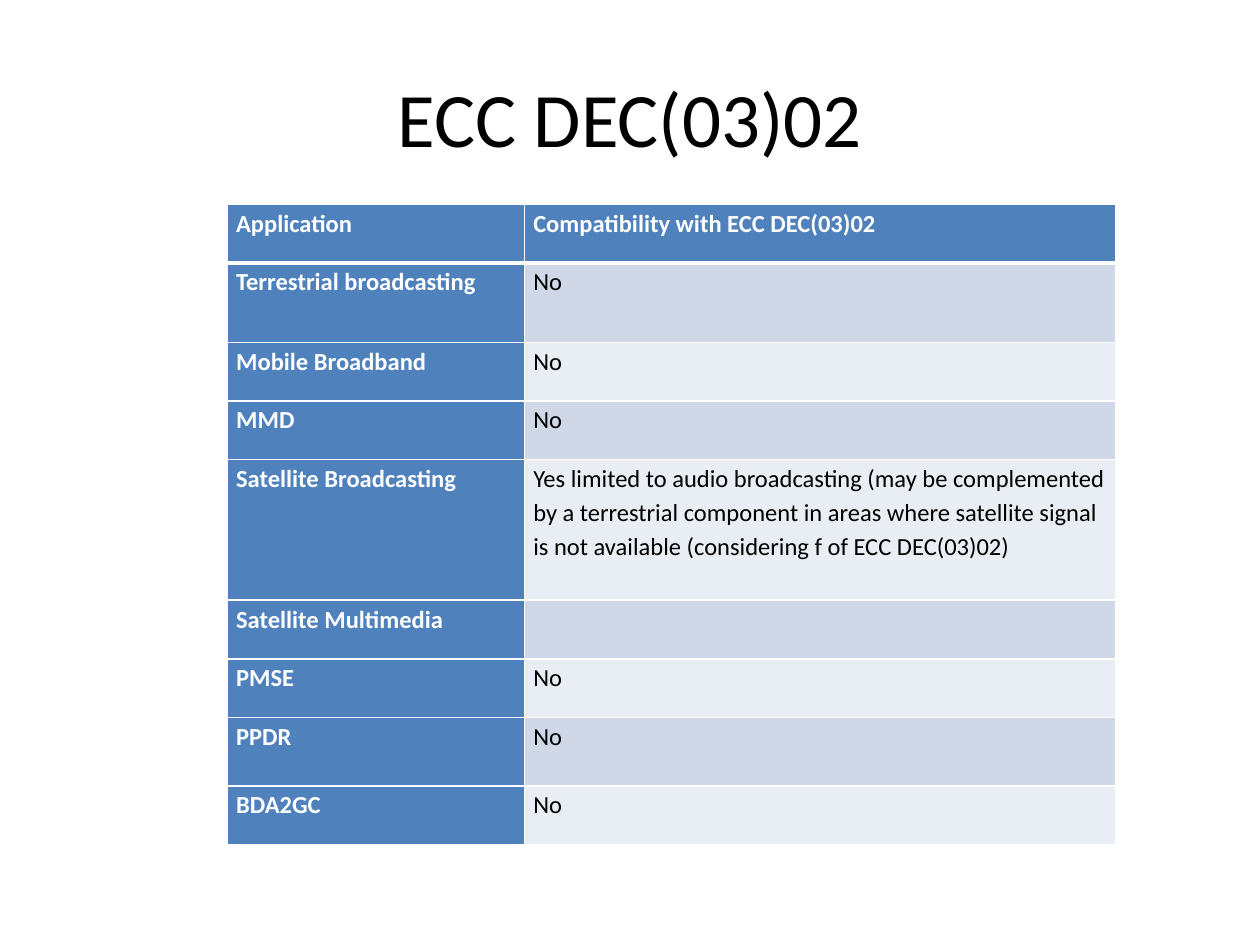
from lxml.etree import SubElement
from pptx import Presentation
from pptx.dml.color import RGBColor
from pptx.enum.text import MSO_ANCHOR, PP_ALIGN
from pptx.oxml.ns import qn
from pptx.util import Cm, Pt

FONT = "Calibri"
BLUE, WHITE, BLACK = "4F81BD", "FFFFFF", "000000"
BANDS = ("D0D8E8", "E9EDF4")
COLUMN_WIDTHS = (5.99, 11.92)
ROW_HEIGHT = 1.18

# Application, compatibility, row height in cm
ROWS = [
    ("Application", "Compatibility with ECC DEC(03)02", ROW_HEIGHT),
    ("Terrestrial broadcasting", "No", 1.6),
    ("Mobile Broadband", "No", ROW_HEIGHT),
    ("MMD", "No", ROW_HEIGHT),
    ("Satellite Broadcasting",
     "Yes limited to audio broadcasting (may be complemented by a terrestrial "
     "component in areas where satellite signal is not available "
     "(considering f of ECC DEC(03)02)", 2.84),
    ("Satellite Multimedia", "", ROW_HEIGHT),
    ("PMSE", "No", ROW_HEIGHT),
    ("PPDR", "No", 1.39),
    ("BDA2GC", "No", ROW_HEIGHT),
]


def color(value):
    return RGBColor.from_string(value)


def set_font(paragraph, size, value, bold=False):
    font = paragraph.font
    font.name, font.size, font.bold = FONT, Pt(size), bold
    font.color.rgb = color(value)


def add_title(page, text):
    box = page.shapes.add_textbox(Cm(1.27), Cm(0.76), Cm(22.86), Cm(3.18))
    frame = box.text_frame
    frame.word_wrap = True
    frame.vertical_anchor = MSO_ANCHOR.MIDDLE
    para = frame.paragraphs[0]
    para.text = text
    para.alignment = PP_ALIGN.CENTER
    set_font(para, 44, BLACK)


def set_borders(cell, top, bottom):
    """Draw white borders; must run before the cell gets its fill."""
    properties = cell._tc.get_or_add_tcPr()
    for side, width in (("L", 1), ("R", 1), ("T", top), ("B", bottom)):
        line = SubElement(properties, qn(f"a:ln{side}"), w=str(Pt(width)))
        fill = SubElement(line, qn("a:solidFill"))
        SubElement(fill, qn("a:srgbClr"), val=WHITE)


def fill_cell(cell, text, fill, heading):
    cell.margin_left = cell.margin_right = Cm(0.18)
    cell.margin_top = cell.margin_bottom = 0
    cell.fill.solid()
    cell.fill.fore_color.rgb = color(fill)
    para = cell.text_frame.paragraphs[0]
    para.text = text
    para.line_spacing = 1.15
    set_font(para, 14, WHITE if heading else BLACK, heading)


def add_compatibility_table(page):
    height = sum(row[2] for row in ROWS)
    table = page.shapes.add_table(
        len(ROWS), len(COLUMN_WIDTHS), Cm(4.58), Cm(4.12),
        Cm(sum(COLUMN_WIDTHS)), Cm(height)).table
    for column, width in zip(table.columns, COLUMN_WIDTHS):
        column.width = Cm(width)
    for i, (*texts, row_height) in enumerate(ROWS):
        table.rows[i].height = Cm(row_height)
        for j, text in enumerate(texts):
            heading = i == 0 or j == 0
            cell = table.cell(i, j)
            set_borders(cell, 3 if i == 1 else 1, 3 if i == 0 else 1)
            fill_cell(cell, text, BLUE if heading else BANDS[(i - 1) % 2], heading)


def main():
    deck = Presentation()
    deck.slide_width, deck.slide_height = Cm(25.4), Cm(19.05)
    page = deck.slides.add_slide(deck.slide_layouts[6])
    add_title(page, "ECC DEC(03)02")
    add_compatibility_table(page)
    deck.save("out.pptx")


if __name__ == "__main__":
    main()
